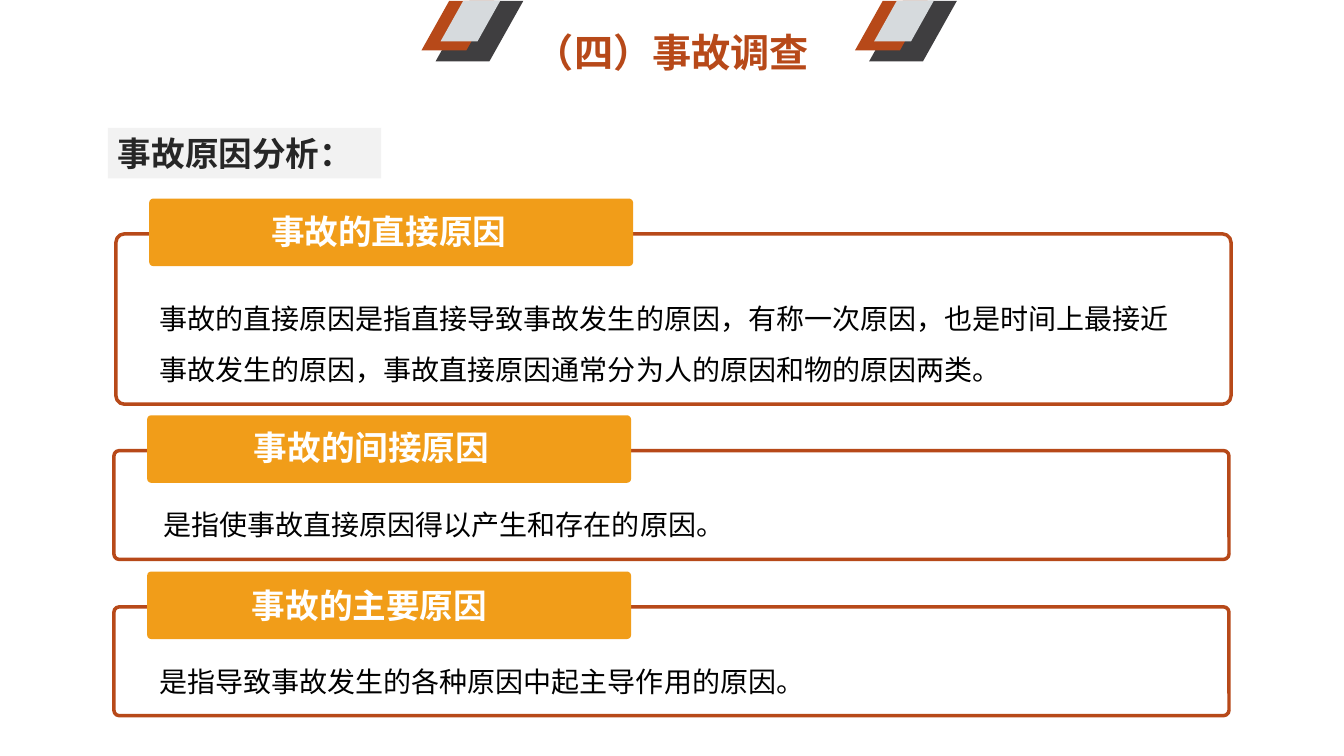
from dataclasses import dataclass

import pptx
import pptx.dml.color
import pptx.enum.shapes
import pptx.enum.text
import pptx.oxml.ns
import pptx.util
from lxml import etree

Inches = pptx.util.Inches
Preset = pptx.enum.shapes.MSO_SHAPE
Align = pptx.enum.text.PP_ALIGN


@dataclass(frozen=True)
class Theme:
    font: str = "Noto Sans CJK SC"
    rust: str = "B74919"
    amber: str = "F19D19"
    charcoal: str = "3F3E40"
    silver: str = "D6DADD"
    pale: str = "F2F2F2"
    ink: str = "262626"
    black: str = "000000"
    white: str = "FFFFFF"
    title_size: int = 28
    heading_size: int = 24
    body_size: int = 20
    outline: float = 2.5


THEME = Theme()


def rgb(value):
    return pptx.dml.color.RGBColor.from_string(value)


def add_block(slide, preset, box, fill=None, line=None, adjust=None):
    block = slide.shapes.add_shape(preset, *map(Inches, box))
    block.shadow.inherit = False
    if adjust is not None:
        block.adjustments[0] = adjust
    if fill:
        block.fill.solid()
        block.fill.fore_color.rgb = rgb(fill)
    else:
        block.fill.background()
    if line:
        block.line.color.rgb = rgb(line)
        block.line.width = pptx.util.Pt(THEME.outline)
    else:
        block.line.fill.background()
    return block


def write(holder, text, size, color, bold=False, align=Align.LEFT, spacing=None):
    frame = holder.text_frame
    frame.word_wrap = True
    frame.auto_size = pptx.enum.text.MSO_AUTO_SIZE.SHAPE_TO_FIT_TEXT
    frame.vertical_anchor = pptx.enum.text.MSO_ANCHOR.TOP
    paragraph = frame.paragraphs[0]
    paragraph.text = text
    paragraph.alignment = align
    if spacing:
        paragraph.line_spacing = spacing
    font = paragraph.font
    font.name = THEME.font
    font.size = pptx.util.Pt(size)
    font.bold = bold
    font.color.rgb = rgb(color)
    qn = pptx.oxml.ns.qn
    defaults = paragraph._p.pPr.find(qn("a:defRPr"))
    etree.SubElement(defaults, qn("a:ea"), typeface=THEME.font)


def add_text(slide, box, text, size, color, **style):
    write(slide.shapes.add_textbox(*map(Inches, box)), text, size, color, **style)


def add_ornament(slide, left):
    layers = (
        (0.14, 0.87, 0.6, THEME.charcoal),
        (0, 0.72, 0.49, THEME.rust),
        (0.19, 0.59, 0.4, THEME.silver),
    )
    for offset, width, height, fill in layers:
        add_block(slide, Preset.PARALLELOGRAM, (left + offset, 0.01, width, height),
                  fill=fill, adjust=0.56)


def add_cause(slide, left, top, height, name, name_at, detail, detail_box, spacing):
    add_block(slide, Preset.ROUNDED_RECTANGLE, (left, top, 11.06, height),
              line=THEME.rust, adjust=0.05)
    add_block(slide, Preset.ROUNDED_RECTANGLE, (left + 0.33, top - 0.35, 4.8, 0.67),
              fill=THEME.amber, adjust=0.06)
    add_text(slide, (*name_at, 2.68, 0.51), name, THEME.heading_size, THEME.white,
             bold=True)
    add_text(slide, detail_box, detail, THEME.body_size, THEME.black, spacing=spacing)


def main():
    deck = pptx.Presentation()
    deck.slide_width = Inches(13.33)
    deck.slide_height = Inches(7.5)
    slide = deck.slides.add_slide(deck.slide_layouts[6])

    for left in (4.18, 8.48):
        add_ornament(slide, left)
    add_text(slide, (5.19, 0.23, 2.95, 0.57), "（四）事故调查", THEME.title_size,
             THEME.rust, bold=True, align=Align.CENTER)

    heading = add_block(slide, Preset.RECTANGLE, (1.07, 1.27, 2.71, 0.5),
                        fill=THEME.pale)
    write(heading, "事故原因分析：", THEME.heading_size, THEME.ink, bold=True)

    causes = (
        (1.15, 2.32, 1.69, "事故的直接原因", (2.59, 2.04),
         "事故的直接原因是指直接导致事故发生的原因，有称一次原因，也是时间上最接近"
         "事故发生的原因，事故直接原因通常分为人的原因和物的原因两类。",
         (1.48, 2.78, 10.45, 1.11), 1.5),
        (1.13, 4.47, 1.08, "事故的间接原因", (2.42, 4.19),
         "是指使事故直接原因得以产生和存在的原因。", (1.52, 4.9, 8.17, 0.48), 1.25),
        (1.13, 6.02, 1.08, "事故的主要原因", (2.4, 5.75),
         "是指导致事故发生的各种原因中起主导作用的原因。", (1.48, 6.46, 7.86, 0.48), 1.25),
    )
    for cause in causes:
        add_cause(slide, *cause)

    deck.save("out.pptx")


if __name__ == "__main__":
    main()
